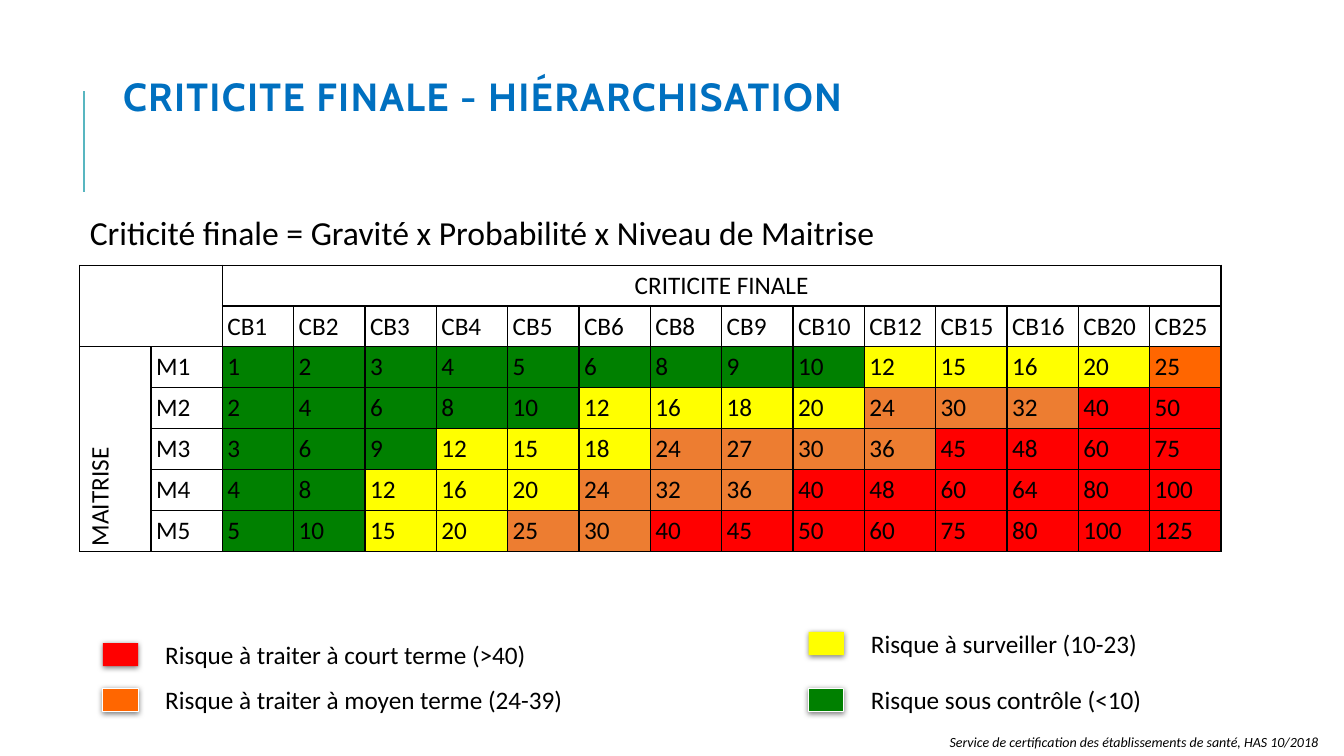
import pptx
import pptx.dml.color
import pptx.enum.shapes
import pptx.enum.text
import pptx.oxml
import pptx.oxml.ns
import pptx.util
from lxml import etree

RGB = pptx.dml.color.RGBColor
Inches, Pt = pptx.util.Inches, pptx.util.Pt
ALIGN = pptx.enum.text.PP_ALIGN
ANCHOR = pptx.enum.text.MSO_ANCHOR
qn = pptx.oxml.ns.qn

BLACK, WHITE = RGB(0, 0, 0), RGB(255, 255, 255)
BLUE, TEAL = RGB(0x00, 0x70, 0xC0), RGB(0x58, 0xB6, 0xC0)
GREEN, YELLOW, RED = RGB(0, 0x80, 0), RGB(255, 255, 0), RGB(255, 0, 0)
ORANGE, BRIGHT_ORANGE = RGB(0xED, 0x7D, 0x31), RGB(0xFF, 0x66, 0)

TITLE = "CRITICITE FINALE - HIÉRARCHISATION"
FORMULA = "Criticité finale = Gravité x Probabilité x Niveau de Maitrise"
SOURCE = "Service de certification des établissements de santé, HAS 10/2018"
RAW_SCORES = [1, 2, 3, 4, 5, 6, 8, 9, 10, 12, 15, 16, 20, 25]
CONTROL_LEVELS = [1, 2, 3, 4, 5]
# label, colour, left, top, text width, white outline
LEGEND = [
    ("Risque à traiter à court terme (>40)", RED, 1.02, 6.38, 5.25, False),
    ("Risque à traiter à moyen terme (24-39)", BRIGHT_ORANGE, 1.02, 6.83, 5.25, True),
    ("Risque à surveiller (10-23)", YELLOW, 8.02, 6.27, 3.57, False),
    ("Risque sous contrôle (<10)", GREEN, 8.02, 6.83, 5.25, True),
]
COL_W, ROW_H = 11.4 / 16, 0.4
COL_W = 11.32 / (len(RAW_SCORES) + 2)


def box(left, top, width, height):
    return [Inches(v) for v in (left, top, width, height)]


def place(shape, *lengths):
    shape.left, shape.top, shape.width, shape.height = box(*lengths)


def style(p, text, size, color=BLACK, name="Calibri"):
    p.text = text
    p.font.size, p.font.name, p.font.color.rgb = Pt(size), name, color


def add_label(s, text, size, *lengths):
    tf = s.shapes.add_textbox(*box(*lengths)).text_frame
    tf.word_wrap = True
    style(tf.paragraphs[0], text, size)
    return tf.paragraphs[0]


def risk_color(score, level):
    if score <= 10:
        return GREEN
    if score < 24:
        return YELLOW
    if score < 40:
        return BRIGHT_ORANGE if level == 1 else ORANGE
    return RED


def fill_cell(cell, text="", color=None):
    style(cell.text_frame.paragraphs[0], text, 18)
    cell.margin_left = cell.margin_right = Inches(0.05)
    cell.margin_top = cell.margin_bottom = Inches(0.05)
    if color is None:
        cell.fill.background()
    else:
        cell.fill.solid()
        cell.fill.fore_color.rgb = color


def add_borders(cell):
    tc_pr = cell._tc.get_or_add_tcPr()
    for i, side in enumerate(("lnL", "lnR", "lnT", "lnB")):
        ln = etree.Element(qn("a:" + side), w=str(Pt(1)))
        solid = etree.SubElement(ln, qn("a:solidFill"))
        etree.SubElement(solid, qn("a:srgbClr"), val=str(BLACK))
        tc_pr.insert(i, ln)


def add_matrix(s):
    rows, cols = len(CONTROL_LEVELS) + 2, len(RAW_SCORES) + 2
    frame = s.shapes.add_table(rows, cols, *box(0.79, 2.63, cols * COL_W, rows * ROW_H))
    table = frame.table
    table.first_row = table.horz_banding = False
    for column in table.columns:
        column.width = Inches(COL_W)
    for row in table.rows:
        row.height = Inches(ROW_H)
    for cell in table.iter_cells():
        fill_cell(cell)

    fill_cell(table.cell(0, 2), "CRITICITE FINALE")
    table.cell(0, 2).text_frame.paragraphs[0].alignment = ALIGN.CENTER
    for c, raw in enumerate(RAW_SCORES, 2):
        fill_cell(table.cell(1, c), f"CB{raw}")
    for r, level in enumerate(CONTROL_LEVELS, 2):
        fill_cell(table.cell(r, 1), f"M{level}")
        for c, raw in enumerate(RAW_SCORES, 2):
            score = raw * level
            fill_cell(table.cell(r, c), str(score), risk_color(score, level))

    side = table.cell(2, 0)
    fill_cell(side, "MAITRISE")
    side.vertical_anchor = ANCHOR.MIDDLE
    side._tc.get_or_add_tcPr().set("vert", "vert270")
    for cell in table.iter_cells():
        add_borders(cell)
    table.cell(0, 0).merge(table.cell(1, 1))
    table.cell(0, 2).merge(table.cell(0, cols - 1))
    side.merge(table.cell(rows - 1, 0))


def add_shadow(shape):
    effects = etree.SubElement(shape._element.spPr, qn("a:effectLst"))
    shadow = etree.SubElement(effects, qn("a:outerShdw"), blurRad=str(Pt(4)),
                              dist=str(Pt(1)), dir=str(90 * 60000), rotWithShape="0")
    color = etree.SubElement(shadow, qn("a:srgbClr"), val=str(BLACK))
    etree.SubElement(color, qn("a:alpha"), val="50000")


def add_legend(s):
    for text, color, left, top, width, outlined in LEGEND:
        swatch = s.shapes.add_shape(pptx.enum.shapes.MSO_SHAPE.RECTANGLE,
                                    *box(left, top, 0.35, 0.23))
        swatch.fill.solid()
        swatch.fill.fore_color.rgb = color
        if outlined:
            swatch.line.color.rgb = WHITE
            swatch.line.width = Pt(0.75)
        else:
            swatch.line.fill.background()
        add_shadow(swatch)
        add_label(s, text, 18, left + 0.52, top - 0.09, width, 0.4)


def add_heading(s):
    rule = s.shapes.add_connector(pptx.enum.shapes.MSO_CONNECTOR.STRAIGHT,
                                  *box(0.83, 1.9, 0.83, 0.9))
    rule.line.color.rgb, rule.line.width = TEAL, Pt(1.5)
    etree.SubElement(rule._element.spPr, qn("a:effectLst"))

    title, body = s.shapes.title, s.placeholders[1]
    place(title, 1.12, 0.52, 9, 0.95)
    place(body, 0.79, 2.02, 11.62, 0.56)
    for shape in (title, body):
        shape.text_frame.auto_size = pptx.enum.text.MSO_AUTO_SIZE.NONE
    title.text_frame.vertical_anchor = ANCHOR.MIDDLE
    p = title.text_frame.paragraphs[0]
    style(p, TITLE, 28, BLUE, "Cabin")
    p.font.bold, p.alignment, p.line_spacing = True, ALIGN.LEFT, 0.8
    p.runs[0]._r.get_or_add_rPr().set("spc", "100")

    p = body.text_frame.paragraphs[0]
    style(p, FORMULA, 24)
    p.line_spacing, p.space_before, p.space_after = 1.08, Pt(6), Pt(2)
    p_pr = p._p.get_or_add_pPr()
    p_pr.set("marL", "0")
    p_pr.set("indent", "0")
    p_pr.insert_element_before(pptx.oxml.parse_xml(
        '<a:buNone xmlns:a="http://schemas.openxmlformats.org/drawingml/2006/main"/>'),
        "a:tabLst", "a:defRPr", "a:extLst")


def main():
    prs = pptx.Presentation()
    prs.slide_width, prs.slide_height = Inches(13.33), Inches(7.5)
    s = prs.slides.add_slide(prs.slide_layouts[1])
    add_heading(s)
    add_matrix(s)
    add_legend(s)
    add_label(s, SOURCE, 10, 9.32, 7.23, 4.02, 0.27).font.italic = True
    prs.save("out.pptx")


if __name__ == "__main__":
    main()
